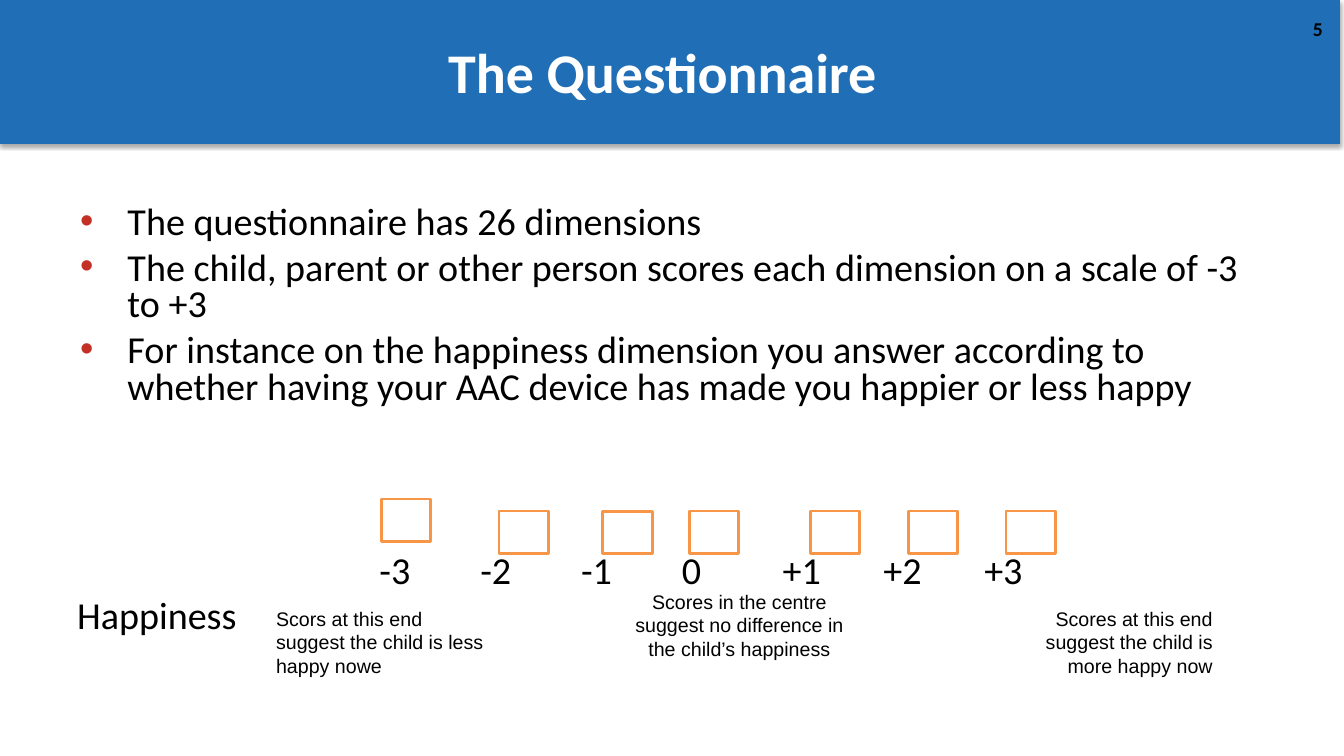
from dataclasses import dataclass

from lxml import etree
from pptx import Presentation
from pptx.dml.color import RGBColor
from pptx.enum.shapes import MSO_SHAPE
from pptx.enum.text import MSO_ANCHOR, MSO_AUTO_SIZE, PP_ALIGN
from pptx.oxml import parse_xml
from pptx.oxml.ns import nsdecls, qn
from pptx.util import Pt

RECT = MSO_SHAPE.RECTANGLE
LEFT, MID, RIGHT = PP_ALIGN.LEFT, PP_ALIGN.CENTER, PP_ALIGN.RIGHT
TOP, HALF = MSO_ANCHOR.TOP, MSO_ANCHOR.MIDDLE
GROW, FIXED = MSO_AUTO_SIZE.SHAPE_TO_FIT_TEXT, MSO_AUTO_SIZE.NONE


@dataclass(frozen=True)
class Theme:
    """Colours, fonts and type sizes of the slide."""
    blue: str = "206EB5"
    red: str = "C33026"
    gold: str = "F79646"
    white: str = "FFFFFF"
    black: str = "000000"
    main: str = "Calibri"
    small: str = "Arial"
    head: float = 40
    body: float = 27.2
    note: float = 14


THEME = Theme()
POINTS = [
    "The questionnaire has 26 dimensions",
    "The child, parent or other person scores each dimension on a scale of -3 to +3",
    "For instance on the happiness dimension you answer according to whether "
    "having your AAC device has made you happier or less happy",
]
SCORES = ["-3", "-2", "-1", "0", "+1", "+2", "+3"]
TICKS = [(0, 0), (84.2, 8.6), (158.4, 8.8), (220.3, 8.6),
         (306.7, 8.6), (376.6, 8.6), (446.4, 8.6)]
NOTES = [
    ("Scors at this end suggest the child is less happy nowe", 0, 12.2, 58, LEFT),
    ("Scores at this end suggest the child is more happy now", 517, 12.2, 73, RIGHT),
    ("Scores in the centre suggest no difference in the child’s happiness",
     254.9, 0, 94, MID),
]


def apply(item, form):
    """Set each attribute of an item from a dict of format values."""
    for name, value in form.items():
        setattr(item, name, value)


def write(para, text, size, face, tint=THEME.black, bold=False):
    """Add one styled run to a paragraph."""
    run = para.add_run()
    run.text = text
    apply(run.font, {"size": Pt(size), "name": face, "bold": bold})
    run.font.color.rgb = RGBColor.from_string(tint)


def frame(slide, box, anchor=TOP, fit=FIXED):
    """Add a wrapping text box and return its text frame."""
    text = slide.shapes.add_textbox(*map(Pt, box)).text_frame
    apply(text, {"word_wrap": True, "auto_size": fit, "vertical_anchor": anchor})
    return text


def label(slide, box, text, style, align, anchor=TOP, fit=FIXED):
    """Place a text box that holds one paragraph."""
    para = frame(slide, box, anchor, fit).paragraphs[0]
    para.alignment = align
    write(para, text, *style)


def block(slide, box, fill, edge, width):
    """Draw a filled and outlined rectangle without a shadow."""
    shape = slide.shapes.add_shape(RECT, *map(Pt, box))
    shape.shadow.inherit = False
    shape.fill.solid()
    shape.fill.fore_color.rgb = RGBColor.from_string(fill)
    shape.line.color.rgb = RGBColor.from_string(edge)
    shape.line.width = Pt(width)
    return shape


def shade(shape):
    """Cast a soft shadow straight down from a shape."""
    glow = parse_xml(
        f'<a:outerShdw {nsdecls("a")} blurRad="{Pt(3.1)}" dist="{Pt(1.8)}" '
        'dir="5400000" rotWithShape="0"><a:srgbClr val="000000">'
        '<a:alpha val="35000"/></a:srgbClr></a:outerShdw>')
    shape._element.spPr.find(qn("a:effectLst")).append(glow)


def banner(slide, box):
    """Draw the title band with its heading and page number."""
    x, y, w, h = box
    shade(block(slide, box, THEME.blue, THEME.blue, 0.75))
    label(slide, (x + w - 44.6, y + 8.6, 39.6, 28.8), "5",
          (THEME.note, THEME.main, THEME.black, True), RIGHT)
    label(slide, (x - 5, y, w - 0.7, h), "The Questionnaire",
          (THEME.head, THEME.main, THEME.white, True), MID, HALF)


def bullet(para):
    """Give a paragraph a hanging coloured bullet."""
    props = para._p.get_or_add_pPr()
    props.set("marL", str(Pt(36)))
    props.set("indent", str(-Pt(33.8)))
    tint = etree.SubElement(props, qn("a:buClr"))
    etree.SubElement(tint, qn("a:srgbClr"), val=THEME.red)
    etree.SubElement(props, qn("a:buFont"), typeface="Arial")
    etree.SubElement(props, qn("a:buChar"), char="•")


def tabs(para):
    """Set one tab stop an inch apart for each score."""
    stops = etree.SubElement(para._p.get_or_add_pPr(), qn("a:tabLst"))
    for i in range(len(SCORES)):
        etree.SubElement(stops, qn("a:tab"), pos=str(Pt(72 * (i + 3))), algn="l")


def body(slide, box):
    """Write the bullets, the row of scores and the dimension name."""
    text = frame(slide, box)
    row = "".join("\t" + score for score in SCORES)
    lines = [(point, bullet, 6.4) for point in POINTS]
    lines += [(row, tabs, 105.4), ("Happiness", None, 6.4)]
    for i, (line, mark, gap) in enumerate(lines):
        para = text.add_paragraph() if i else text.paragraphs[0]
        if mark:
            mark(para)
        apply(para, {"line_spacing": 0.8, "space_before": Pt(gap if i else 0)})
        write(para, line, THEME.body, THEME.main)


def ticks(slide, box):
    """Draw the answer boxes above the scores."""
    x, y, w, h = box
    for dx, dy in TICKS:
        block(slide, (x + dx, y + dy, w, h), THEME.white, THEME.gold, 2)


def notes(slide, box):
    """Place the remarks that explain the ends and centre of the scale."""
    x, y, w = box
    for text, dx, dy, h, align in NOTES:
        label(slide, (x + dx, y + dy, w, h), text,
              (THEME.note, THEME.small), align, TOP, GROW)


def main():
    """Build the slide and save it."""
    deck = Presentation()
    apply(deck, {"slide_width": Pt(960), "slide_height": Pt(540)})
    slide = deck.slides.add_slide(deck.slide_layouts[6])
    banner(slide, (0, 0, 957, 102.2))
    body(slide, (48, 144, 864, 314.6))
    ticks(slide, (272.2, 356.4, 35.3, 30.2))
    notes(slide, (190.1, 417.6, 166.3))
    deck.save("out.pptx")


if __name__ == "__main__":
    main()
